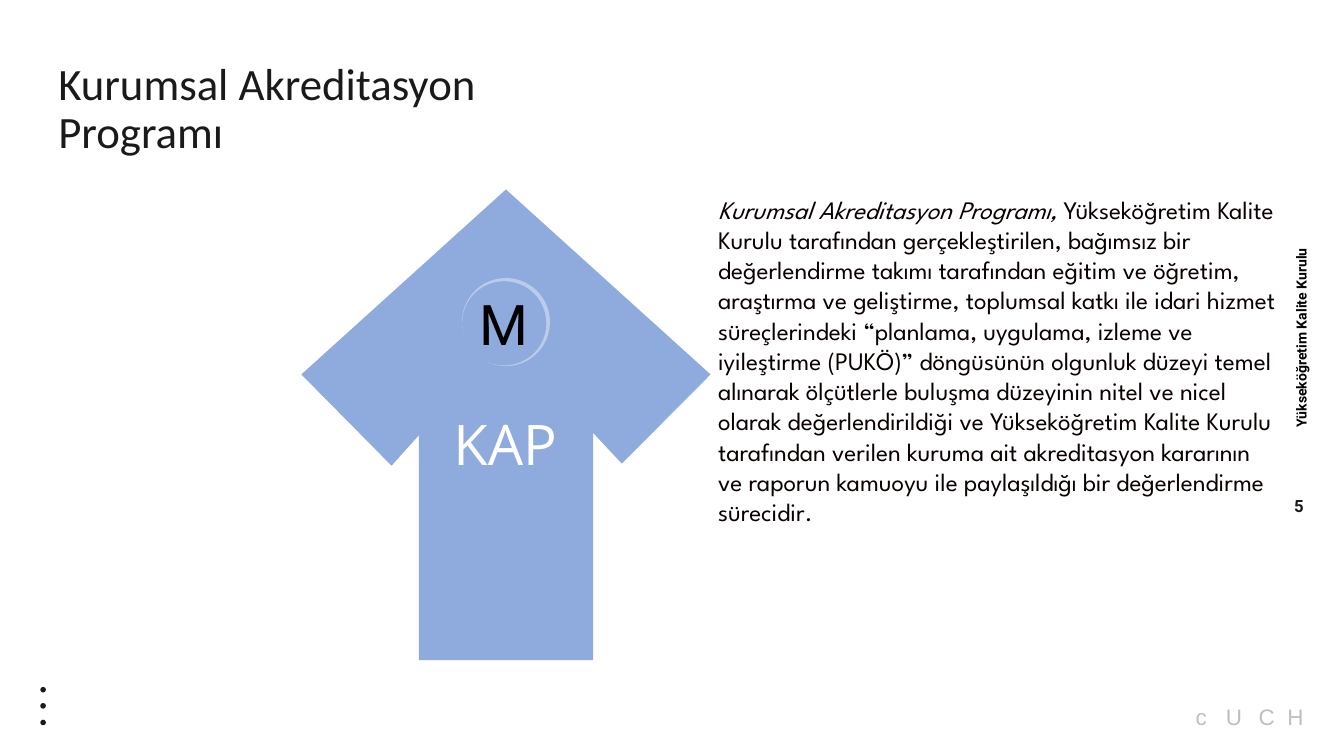
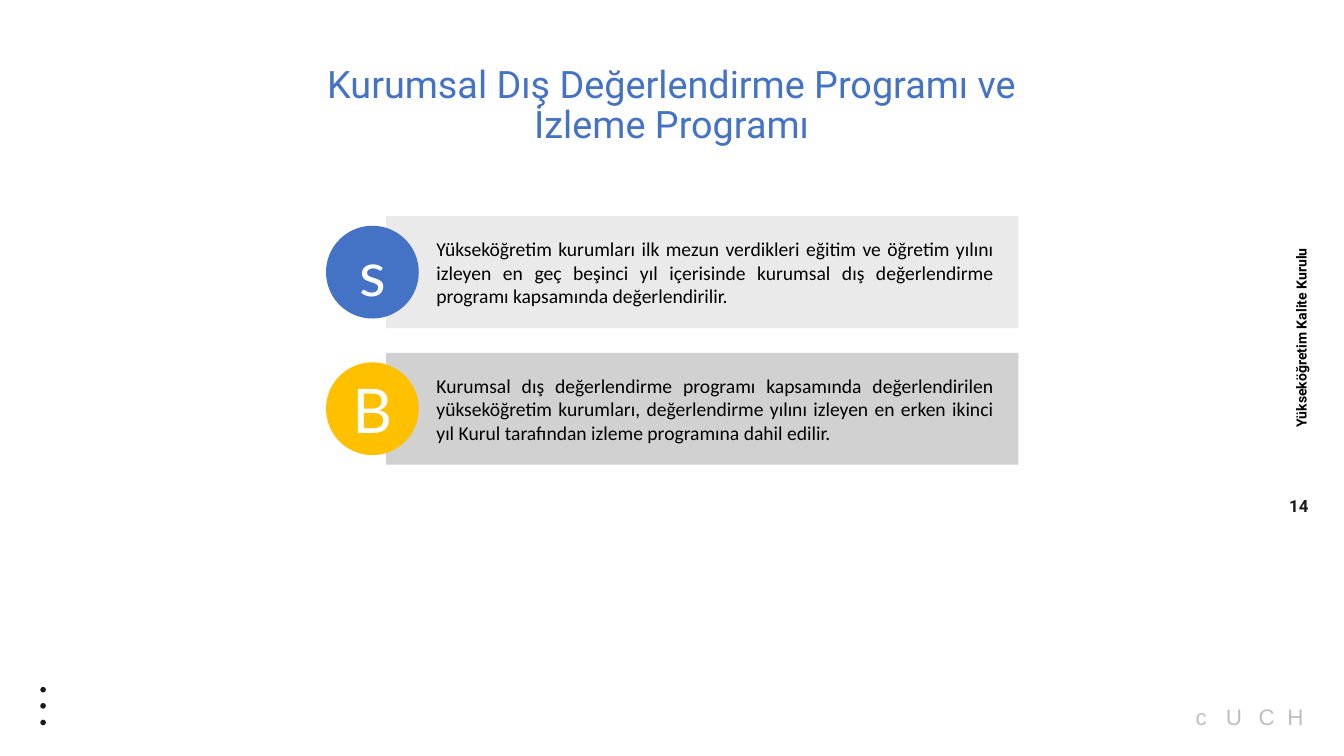
from lxml.etree import SubElement
from pptx import Presentation
from pptx.dml.color import RGBColor as RGB
from pptx.enum.shapes import MSO_SHAPE as Kind
from pptx.enum.text import MSO_ANCHOR as Anchor, MSO_AUTO_SIZE as Auto, PP_ALIGN as Align
from pptx.oxml.ns import qn
from pptx.util import Pt

PX = 9144  # one px is a hundredth of an inch
WIDE, HIGH = 2667, 1500

INK = RGB(0x1A, 0x1A, 0x1A)
BLACK = RGB(0, 0, 0)
BODY = RGB(0x0A, 0, 0)
WHITE = RGB(255, 255, 255)
PALE = RGB(0xBF, 0xBF, 0xBF)
SKY = RGB(0x8F, 0xAA, 0xDC)
BLUE = RGB(0x44, 0x72, 0xC4)
GOLD = RGB(0xFF, 0xC0, 0)

ABOUT = [
    ("Kurumsal Akreditasyon Programı,", True),
    (" Yükseköğretim Kalite Kurulu tarafından gerçekleştirilen, bağımsız bir "
     "değerlendirme takımı tarafından eğitim ve öğretim, araştırma ve geliştirme, "
     "toplumsal katkı ile idari hizmet süreçlerindeki “planlama, uygulama, izleme ve "
     "iyileştirme (PUKÖ)” döngüsünün olgunluk düzeyi temel alınarak ölçütlerle buluşma "
     "düzeyinin nitel ve nicel olarak değerlendirildiği ve Yükseköğretim Kalite Kurulu "
     "tarafından verilen kuruma ait akreditasyon kararının ve raporun kamuoyu ile "
     "paylaşıldığı bir değerlendirme sürecidir.", False),
]
RULES = [
    ("s", BLUE, 9,
     "Yükseköğretim kurumları ilk mezun verdikleri eğitim ve öğretim yılını izleyen en "
     "geç beşinci yıl içerisinde kurumsal dış değerlendirme programı kapsamında "
     "değerlendirilir."),
    ("B", GOLD, 20,
     "Kurumsal dış değerlendirme programı kapsamında değerlendirilen yükseköğretim "
     "kurumları, değerlendirme yılını izleyen en erken ikinci yıl Kurul tarafından "
     "izleme programına dahil edilir."),
]


def scale(*sizes):
    return [size * PX for size in sizes]


def write(shape, text, size, font, color, bold=None, align=Align.LEFT,
          anchor=Anchor.TOP, inset=(10, 5, 10, 5), wrap=True, fit=False, lead=None):
    """Fill a shape with one paragraph; text is a string or (string, italic) pairs."""
    frame = shape.text_frame
    frame.word_wrap = wrap
    frame.auto_size = Auto.SHAPE_TO_FIT_TEXT if fit else Auto.NONE
    frame.vertical_anchor = anchor
    (frame.margin_left, frame.margin_top,
     frame.margin_right, frame.margin_bottom) = scale(*inset)
    para = frame.paragraphs[0]
    para.alignment = align
    if lead:
        para.line_spacing = lead
    for words, slant in [(text, None)] if isinstance(text, str) else text:
        run = para.add_run()
        run.text = words
        face = run.font
        face.size, face.name, face.bold, face.italic = Pt(size), font, bold, slant
        face.color.rgb = color


def label(shapes, box, text, size, font, color, **style):
    shape = shapes.add_textbox(*scale(*box))
    write(shape, text, size, font, color, **style)
    return shape


def paint(shape, color):
    shape.shadow.inherit = False
    shape.fill.solid()
    shape.fill.fore_color.rgb = color
    shape.line.fill.background()
    return shape


def block(shapes, kind, box, color):
    return paint(shapes.add_shape(kind, *scale(*box)), color)


def fade(part, percent):
    """Set the opacity of the colour inside a fill or line element."""
    for color in part.iter(qn("a:srgbClr")):
        SubElement(color, qn("a:alpha")).set("val", str(percent * 1000))


def frame_page(shapes, number):
    """Draw the side band and footer that all slides share."""
    side = label(shapes, (2390, 645, 383, 44), "Yükseköğretim Kalite Kurulu",
                 20, "Roboto", BLACK, bold=True, anchor=Anchor.MIDDLE, wrap=False, fit=True)
    side.rotation = 270
    for row in range(3):
        block(shapes, Kind.OVAL, (80, 1363 + round(32.5 * row), 11, 11), INK)
    label(shapes, (2560, 971, 35, 64), number, 24, "Roboto", INK, bold=True,
          align=Align.CENTER, anchor=Anchor.MIDDLE, inset=(13, 7, 13, 7), wrap=False)
    for x, letter in zip((2351, 2416, 2481, 2538), "cUCH"):
        label(shapes, (x, 1390, 65, 64), letter, 32, "Arial", PALE, align=Align.CENTER,
              anchor=Anchor.MIDDLE, wrap=False, fit=True)


def draw_arrow(shapes, x, y):
    group = shapes.add_group_shape().shapes
    edge = [(0, 367), (406, 0), (812, 367), (636, 544), (579, 483),
            (579, 934), (233, 934), (233, 488), (179, 548)]
    points = [(x + dx, y + dy) for dx, dy in edge]
    pen = group.build_freeform(*points[0], scale=PX)
    pen.add_line_segments(points[1:], close=True)
    paint(pen.convert_to_shape(), SKY)

    ring = block(group, Kind.OVAL, (x + 336, y + 193, 140, 140), SKY)
    ring.line.color.rgb = WHITE
    ring.line.width = Pt(25)
    fade(ring.element.spPr.find(qn("a:ln")), 40)
    disc = block(group, Kind.OVAL, (x + 319, y + 182, 167, 167), SKY)
    write(disc, "M", 80, "Roboto", BLACK, align=Align.CENTER,
          anchor=Anchor.MIDDLE, inset=(0, 0, 0, 0))
    name = block(group, Kind.RECTANGLE, (x + 292, y + 432, 228, 145), SKY)
    write(name, "KAP", 80, "Open Sans", WHITE, wrap=False, fit=True)


def draw_rule(shapes, x, y, letter, color, shade, text):
    """Draw a shaded bar with a lettered disc over its left end."""
    bar = block(shapes, Kind.RECTANGLE, (x + 119, y, 1255, 222), INK)
    fade(bar.element.spPr, shade)
    write(bar, text, 28, "Calibri", BLACK, align=Align.JUSTIFY,
          anchor=Anchor.MIDDLE, inset=(100, 40, 50, 40), fit=True)
    disc = block(shapes, Kind.OVAL, (x, y + 19, 184, 184), color)
    write(disc, letter, 88, "Lato", WHITE, align=Align.CENTER,
          anchor=Anchor.MIDDLE, inset=(10, 0, 10, 0))


def build_about(shapes):
    frame_page(shapes, "5")
    draw_arrow(shapes, 598, 376)
    label(shapes, (1415, 380, 1131, 677), ABOUT, 36, "League Spartan", BODY, fit=True)
    label(shapes, (106, 117, 1134, 160), "Kurumsal Akreditasyon Programı",
          64, "Calibri", INK, lead=0.9)


def build_rules(shapes):
    frame_page(shapes, "14")
    label(shapes, (638, 125, 1390, 136),
          "Kurumsal Dış Değerlendirme Programı ve İzleme Programı",
          54, "Roboto", BLUE, align=Align.CENTER, lead=0.9)
    for row, rule in enumerate(RULES):
        draw_rule(shapes, 647, 429 + 271 * row, *rule)


def main():
    deck = Presentation()
    deck.slide_width, deck.slide_height = scale(WIDE, HIGH)
    for build in (build_about, build_rules):
        build(deck.slides.add_slide(deck.slide_layouts[6]).shapes)
    deck.save("out.pptx")


if __name__ == "__main__":
    main()
